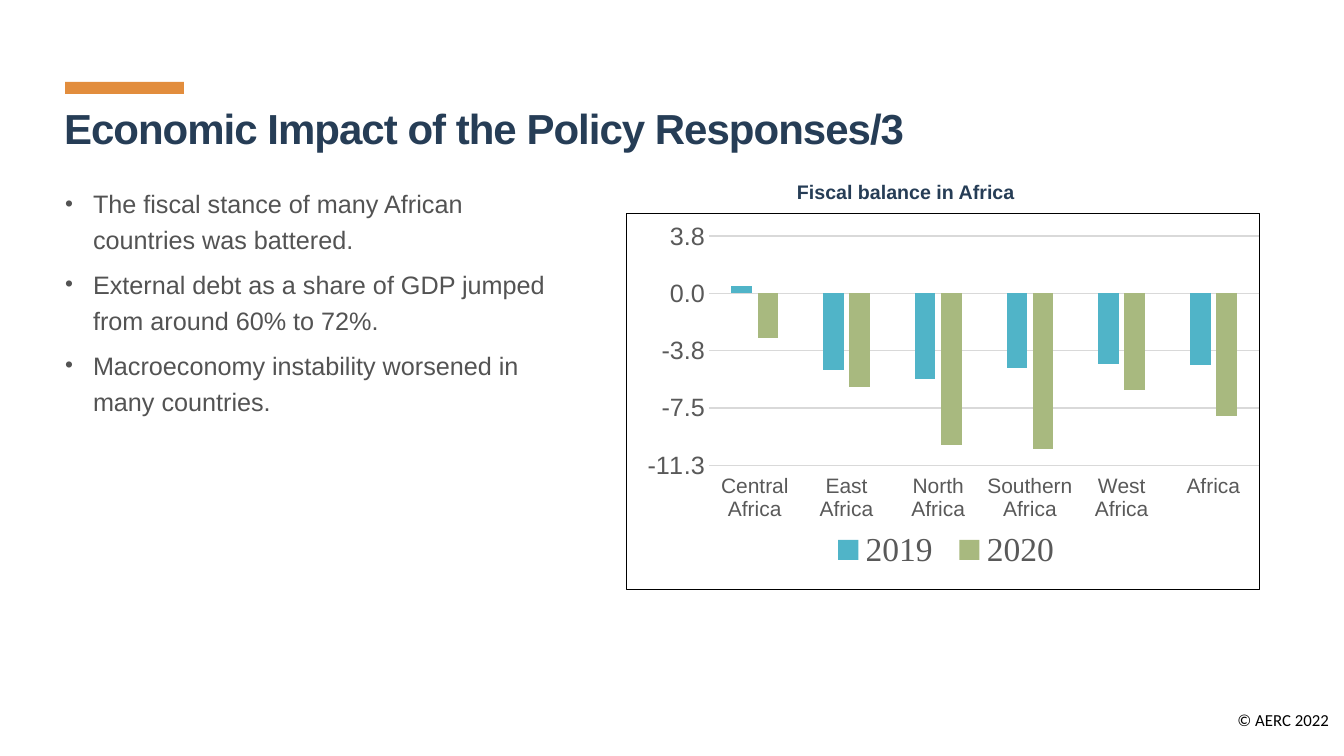
from lxml.etree import SubElement
from pptx import Presentation
from pptx.chart.data import CategoryChartData
from pptx.dml.color import RGBColor
from pptx.enum.chart import XL_CHART_TYPE, XL_LEGEND_POSITION, XL_TICK_LABEL_POSITION, XL_TICK_MARK
from pptx.enum.shapes import MSO_SHAPE
from pptx.enum.text import MSO_ANCHOR, MSO_AUTO_SIZE, PP_ALIGN
from pptx.oxml import parse_xml
from pptx.oxml.ns import nsdecls, qn
from pptx.util import Pt

PX = 914400 / 100.8
NAVY = RGBColor(0x26, 0x3D, 0x56)
ORANGE = RGBColor(0xE2, 0x8D, 0x3D)
BODY_GREY = RGBColor(0x53, 0x53, 0x53)
CHART_GREY = RGBColor(0x59, 0x59, 0x59)
GRID_GREY = RGBColor(0xD9, 0xD9, 0xD9)
BLACK = RGBColor(0, 0, 0)
TEAL = RGBColor(0x50, 0xB4, 0xC8)
OLIVE = RGBColor(0xA8, 0xB9, 0x7F)

BULLETS = [
    "The fiscal stance of many African countries was battered.",
    "External debt as a share of GDP jumped from around 60% to 72%.",
    "Macroeconomy instability worsened in many countries.",
]
REGIONS = ["Central Africa", "East Africa", "North Africa", "Southern Africa", "West Africa", "Africa"]
BALANCES = [
    ("2019", [0.5, -5, -5.6, -4.9, -4.6, -4.7], TEAL),
    ("2020", [-2.9, -6.1, -9.9, -10.2, -6.3, -8], OLIVE),
]


def emu(*lengths):
    """Turn px lengths into EMU."""
    return [round(n * PX) for n in lengths]


def place(s, *box):
    """Move and size a shape in px."""
    s.left, s.top, s.width, s.height = emu(*box)


def style(font, size, color, name="Arial", bold=False):
    """Set the size, colour, typeface and weight of a font."""
    font.size, font.name, font.bold = Pt(size), name, bold
    font.color.rgb = color


def frame(s, wrap=True, anchor=MSO_ANCHOR.TOP):
    """Give a text frame its insets, wrapping and anchor."""
    tf = s.text_frame
    tf.auto_size = MSO_AUTO_SIZE.NONE
    tf.word_wrap, tf.vertical_anchor = wrap, anchor
    tf.margin_left, tf.margin_top, tf.margin_right, tf.margin_bottom = emu(5, 5, 5, 5)
    return tf


def add_label(slide, text, box, align, size, color, name="Arial", bold=False):
    """Add a one-line text box."""
    tf = frame(slide.shapes.add_textbox(*emu(*box)), wrap=False)
    tf.text = text
    p = tf.paragraphs[0]
    p.alignment = align
    style(p.runs[0].font, size, color, name, bold)


def add_bar(slide, *box):
    """Add the accent bar above the title."""
    s = slide.shapes.add_shape(MSO_SHAPE.RECTANGLE, *emu(*box))
    s.shadow.inherit = False
    s.fill.solid()
    s.fill.fore_color.rgb = ORANGE
    s.line.fill.background()


def fill_title(s, text):
    """Place and format the title."""
    place(s, 59, 78, 1184, 108)
    tf = frame(s, anchor=MSO_ANCHOR.MIDDLE)
    tf.text = text
    p = tf.paragraphs[0]
    p.alignment, p.line_spacing = PP_ALIGN.LEFT, 0.85
    r = p.runs[0]
    style(r.font, 30, NAVY, bold=True)
    r.font._element.set("spc", "-70")


def add_bullet(p):
    """Give a paragraph a hanging round bullet."""
    pPr = p._p.get_or_add_pPr()
    indent = emu(28)[0]
    pPr.set("marL", str(indent))
    pPr.set("indent", str(-indent))
    color = SubElement(pPr, qn("a:buClr"))
    SubElement(color, qn("a:srgbClr"), val=str(BODY_GREY))
    SubElement(pPr, qn("a:buSzPct"), val="90000")
    SubElement(pPr, qn("a:buFont"), typeface="Arial")
    SubElement(pPr, qn("a:buChar"), char="•")


def fill_body(s, items):
    """Place the body and fill it with bullets."""
    place(s, 60, 177, 513, 231)
    tf = frame(s)
    for i, item in enumerate(items):
        p = tf.add_paragraph() if i else tf.paragraphs[0]
        p.text = item
        add_bullet(p)
        p.alignment, p.line_spacing = PP_ALIGN.LEFT, 1.2
        p.space_before = Pt(6 if i else 0)
        style(p.runs[0].font, 18, BODY_GREY)


def set_layout(parent, index, x, y, w, h, inner=False):
    """Give a chart part a manual layout in fractions of the chart."""
    for old in parent.findall(qn("c:layout")):
        parent.remove(old)
    layout = parse_xml(f"<c:layout {nsdecls('c')}/>")
    parent.insert(index, layout)
    manual = SubElement(layout, qn("c:manualLayout"))
    if inner:
        SubElement(manual, qn("c:layoutTarget"), val="inner")
    for tag in ("xMode", "yMode"):
        SubElement(manual, qn(f"c:{tag}"), val="edge")
    for tag, value in zip("xywh", (x, y, w, h)):
        SubElement(manual, qn(f"c:{tag}"), val=str(value))


def set_border(chart):
    """Draw a black frame around the chart."""
    chart._chartSpace.find(qn("c:chart")).addnext(parse_xml(
        f'<c:spPr {nsdecls("c", "a")}><a:noFill/><a:ln w="12700"><a:solidFill>'
        f'<a:srgbClr val="{BLACK}"/></a:solidFill></a:ln></c:spPr>'))


def format_axis(axis, size):
    """Set what both axes share."""
    axis.major_tick_mark = axis.minor_tick_mark = XL_TICK_MARK.NONE
    style(axis.tick_labels.font, size, CHART_GREY)


def format_grey_line(line):
    """Make a chart line thin and light grey."""
    line.color.rgb, line.width = GRID_GREY, Pt(1)


def add_balance_chart(slide, *box):
    """Add the clustered column chart of fiscal balances."""
    data = CategoryChartData()
    data.categories = REGIONS
    for name, values, _ in BALANCES:
        data.add_series(name, values)
    chart = slide.shapes.add_chart(XL_CHART_TYPE.COLUMN_CLUSTERED, *emu(*box), data).chart
    chart.has_title = False
    style(chart.font, 10, BLACK)
    set_border(chart)

    plot = chart.plots[0]
    plot.gap_width, plot.overlap, plot.vary_by_categories = 219, -27, False
    for series, (_, _, color) in zip(plot.series, BALANCES):
        series.invert_if_negative = False
        series.format.fill.solid()
        series.format.fill.fore_color.rgb = color

    cats, vals = chart.category_axis, chart.value_axis
    format_axis(cats, 15)
    cats.tick_label_position = XL_TICK_LABEL_POSITION.LOW
    format_grey_line(cats.format.line)
    format_axis(vals, 18)
    vals.minimum_scale, vals.maximum_scale, vals.major_unit = -11.25, 3.75, 3.75
    vals.tick_labels.number_format = "0.0"
    vals.tick_labels.number_format_is_linked = False
    vals.format.line.fill.background()
    format_grey_line(vals.major_gridlines.format.line)

    chart.has_legend = True
    legend = chart.legend
    legend.position, legend.include_in_layout = XL_LEGEND_POSITION.BOTTOM, True
    style(legend.font, 24, CHART_GREY, "Times New Roman")
    set_layout(legend._element, 1, 0.31, 0.84, 0.39, 0.11)
    set_layout(chart._chartSpace.find(".//" + qn("c:plotArea")), 0, 0.13, 0.06, 0.87, 0.61, inner=True)


def main():
    """Build the slide and save it."""
    prs = Presentation()
    prs.slide_width, prs.slide_height = emu(1344, 756)
    slide = prs.slides.add_slide(prs.slide_layouts[1])
    title, body = slide.placeholders
    add_label(slide, "© AERC 2022", (1125, 705, 209, 27), PP_ALIGN.RIGHT, 12, BLACK, "Calibri")
    add_bar(slide, 65, 82, 119, 12)
    fill_title(title, "Economic Impact of the Policy Responses/3")
    fill_body(body, BULLETS)
    add_balance_chart(slide, 626, 213, 634, 377)
    add_label(slide, "Fiscal balance in Africa", (792, 175, 229, 32), PP_ALIGN.LEFT, 14, NAVY, bold=True)
    prs.save("out.pptx")


if __name__ == "__main__":
    main()
